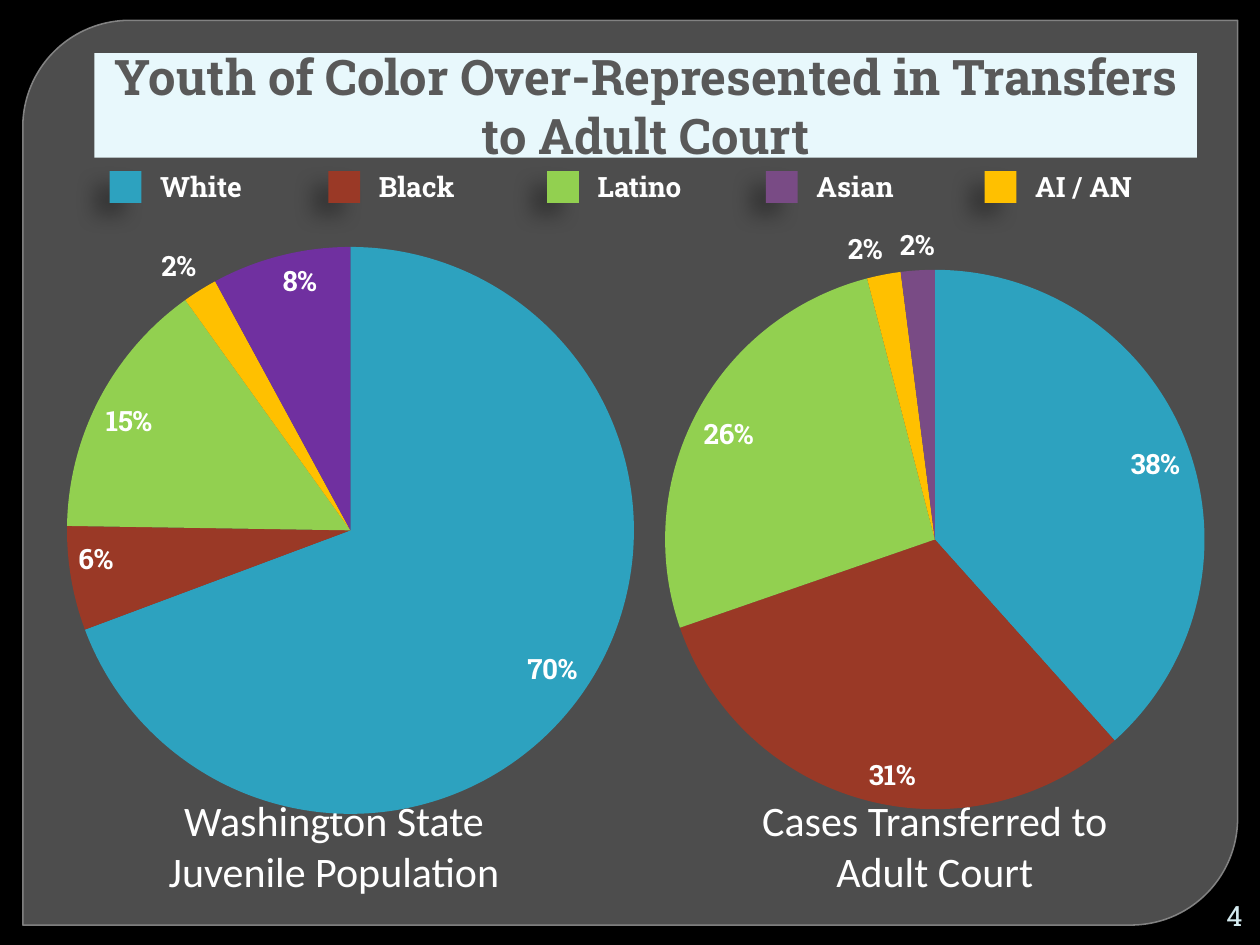
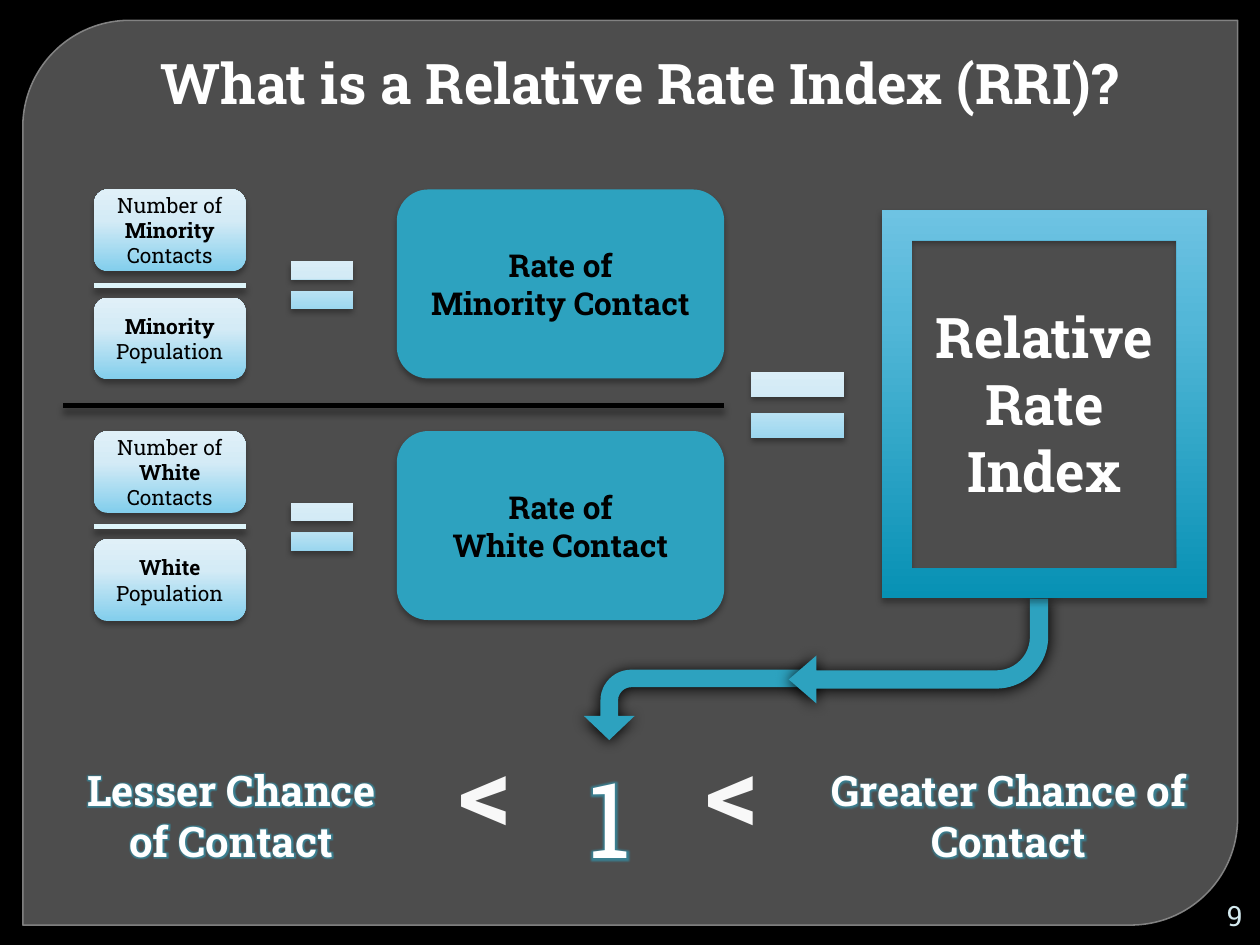
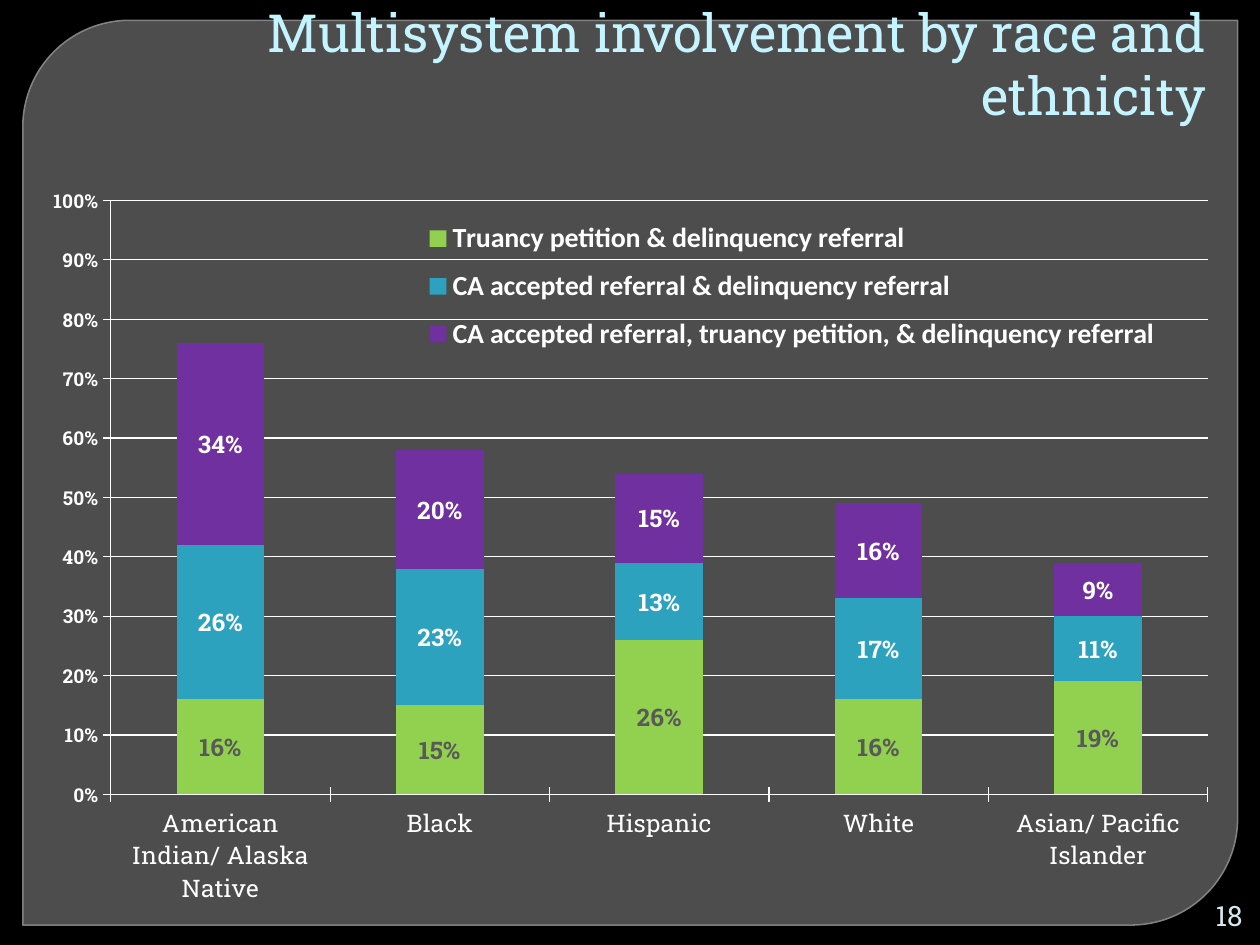
from lxml.etree import SubElement
from pptx import Presentation
from pptx.chart.data import CategoryChartData
from pptx.dml.color import RGBColor
from pptx.enum.chart import XL_CHART_TYPE as ChartType
from pptx.enum.chart import XL_LABEL_POSITION as LabelPosition
from pptx.enum.chart import XL_LEGEND_POSITION as LegendPosition
from pptx.enum.chart import XL_TICK_MARK as TickMark
from pptx.enum.shapes import MSO_CONNECTOR as Connector
from pptx.enum.shapes import MSO_SHAPE as Shape
from pptx.enum.text import MSO_ANCHOR as Anchor
from pptx.enum.text import MSO_AUTO_SIZE as AutoSize
from pptx.enum.text import PP_ALIGN as Align
from pptx.oxml import parse_xml
from pptx.oxml.ns import nsdecls, qn
from pptx.util import Cm, Pt

# Shared style
SLAB, SANS = "Roboto Slab", "Calibri"
WHITE, BLACK, GRAY = "FFFFFF", "000000", "595959"
TEAL, RUST, GREEN = "2DA2BF", "9A3926", "92D050"
PLUM, PURPLE, AMBER = "794B85", "7030A0", "FFC000"
PALE_STOPS = [(0, "82CEEC"), (62, "D4EBF6"), (100, "E0F0F8")]
FRAME_STOPS = [(0, "0791B4"), (72, "53B7D8"), (100, "6EC3E3")]

# Shadows: opacity in percent, blur and distance in points, direction in degrees
SOFT = (32, 3.5, 2.2, 90)
LINE_SHADOW = (43, 4, 3, 90)
ARROW_SHADOW = (100, 8.5, 1, 90)
KEY_SHADOW = (28, 11, 12, 141)


def rgb(value):
    return RGBColor.from_string(value)


def set_alpha(parent, percent):
    color = next(parent.iter(qn("a:srgbClr")))
    SubElement(color, qn("a:alpha"), val=str(percent * 1000))


def shadow_xml(opacity, blur, distance, direction):
    return (f'<a:outerShdw {nsdecls("a")} blurRad="{Pt(blur)}" dist="{Pt(distance)}" '
            f'dir="{direction * 60000}" rotWithShape="0"><a:srgbClr val="{BLACK}">'
            f'<a:alpha val="{opacity * 1000}"/></a:srgbClr></a:outerShdw>')


def glow_xml(color, radius):
    return (f'<a:glow {nsdecls("a")} rad="{Pt(radius)}"><a:srgbClr val="{color}">'
            f'<a:alpha val="60000"/></a:srgbClr></a:glow>')


def format_font(font, size, color=WHITE, bold=False, name=SLAB):
    font.size, font.bold, font.name = Pt(size), bold, name
    font.color.rgb = rgb(color)


def write(frame, text, size=16, color=WHITE, bold=False, font=SLAB, align=Align.CENTER,
          anchor=Anchor.MIDDLE, margin=0.13, effect=None):
    """Fill a text frame; each line is a string or a list of (text, bold) parts."""
    frame.word_wrap, frame.auto_size = True, AutoSize.NONE
    frame.vertical_anchor = anchor
    frame.margin_left = frame.margin_right = Cm(0.25)
    frame.margin_top = frame.margin_bottom = Cm(margin)
    for index, line in enumerate([text] if isinstance(text, str) else text):
        paragraph = frame.add_paragraph() if index else frame.paragraphs[0]
        paragraph.alignment = align
        for part, part_bold in [(line, bold)] if isinstance(line, str) else line:
            run = paragraph.add_run()
            run.text = part
            format_font(run.font, size, color, part_bold, font)
            if effect:
                holder = parse_xml(f'<a:effectLst {nsdecls("a")}>{effect}</a:effectLst>')
                run._r.rPr.find(qn("a:solidFill")).addnext(holder)


def set_layout(parent, index, left, top, width, height, inner=False):
    """Place a chart part by fractions of the chart frame."""
    for old in parent.findall(qn("c:layout")):
        parent.remove(old)
    target = '<c:layoutTarget val="inner"/>' if inner else ""
    parent.insert(index, parse_xml(
        f'<c:layout {nsdecls("c")}><c:manualLayout>{target}'
        f'<c:xMode val="edge"/><c:yMode val="edge"/><c:x val="{left}"/><c:y val="{top}"/>'
        f'<c:w val="{width}"/><c:h val="{height}"/></c:manualLayout></c:layout>'))


class Deck:
    def __init__(self):
        self.presentation = Presentation()
        self.presentation.slide_width, self.presentation.slide_height = Cm(25.4), Cm(19.05)
        self.layout = self.presentation.slide_layouts[5]
        self.slide = None
        background = self.presentation.slide_master.background.fill
        background.solid()
        background.fore_color.rgb = rgb(BLACK)

    def new_slide(self, number, title, box, fill=None, **text_format):
        first = self.slide is None
        self.slide = self.presentation.slides.add_slide(self.layout)
        if first:
            self.add_panel_to_layout()
        placeholder = self.slide.shapes.title
        placeholder.left, placeholder.top, placeholder.width, placeholder.height = map(Cm, box)
        if fill:
            placeholder.fill.solid()
            placeholder.fill.fore_color.rgb = rgb(fill)
        write(placeholder.text_frame, title, **text_format)
        self.text(24, 18.08, 1.3, 0.76, str(number), color="D4EAEF", align=Align.RIGHT)

    def add_panel_to_layout(self):
        panel = self.shape(Shape.ROUND_2_DIAG_RECTANGLE, 0.46, 0.41, 24.49, 18.24,
                           "777777", adjust=(0.118, 0))
        panel.line.color.rgb = rgb("8E8E8E")
        panel.line.width = Pt(0.87)
        properties = panel.element.spPr
        set_alpha(properties.find(qn("a:solidFill")), 65)
        set_alpha(properties.find(qn("a:ln")), 88)
        self.layout.shapes.element.insert(2, panel.element)

    def shape(self, kind, left, top, width, height, fill, adjust=(), shadow=None,
              rotation=0, flip=False):
        """Fill is a colour or a list of gradient stops from bottom to top."""
        shape = self.slide.shapes.add_shape(kind, Cm(left), Cm(top), Cm(width), Cm(height))
        for index, value in enumerate(adjust):
            shape.adjustments[index] = value
        shape.rotation = rotation
        shape.line.fill.background()
        shape.shadow.inherit = False
        shape.fill.solid()
        properties = shape.element.spPr
        if isinstance(fill, str):
            shape.fill.fore_color.rgb = rgb(fill)
        else:
            stops = "".join(f'<a:gs pos="{position * 1000}"><a:srgbClr val="{color}"/></a:gs>'
                            for position, color in fill)
            properties.replace(properties.find(qn("a:solidFill")), parse_xml(
                f'<a:gradFill {nsdecls("a")}><a:gsLst>{stops}</a:gsLst>'
                f'<a:lin ang="16200000" scaled="0"/></a:gradFill>'))
        if shadow:
            properties.find(qn("a:effectLst")).append(parse_xml(shadow_xml(*shadow)))
        if flip:
            properties.find(qn("a:xfrm")).set("flipH", "1")
        return shape

    def text(self, left, top, width, height, text, rotation=0, **text_format):
        box = self.slide.shapes.add_textbox(Cm(left), Cm(top), Cm(width), Cm(height))
        box.rotation = rotation
        write(box.text_frame, text, **text_format)

    def line(self, left, right, y, color):
        line = self.slide.shapes.add_connector(Connector.STRAIGHT, Cm(left), Cm(y),
                                               Cm(right), Cm(y))
        line.line.color.rgb = rgb(color)
        line.line.width = Pt(3)
        effects = SubElement(line.element.spPr, qn("a:effectLst"))
        effects.append(parse_xml(shadow_xml(*LINE_SHADOW)))

    def chart(self, kind, box, categories, series, number_format, plot):
        data = CategoryChartData(number_format=number_format)
        data.categories = categories
        for name, values in series:
            data.add_series(name, values)
        chart = self.slide.shapes.add_chart(kind, *map(Cm, box), data).chart
        chart.has_title = chart.has_legend = False
        format_font(chart.font, 10)
        set_layout(chart.element.find(".//" + qn("c:plotArea")), 0, *plot, inner=True)
        return chart

    def labels(self, series, number_format, position, size, color=WHITE):
        labels = series.data_labels
        labels.show_value = True
        labels.number_format, labels.number_format_is_linked = number_format, False
        labels.position = position
        format_font(labels.font, size, color, bold=True)

    def pie(self, box, values, colors, outside, number_format, plot):
        chart = self.chart(ChartType.PIE, box, ["1", "2", "3", "4", "5"],
                           [("Series 1", values)], number_format, plot)
        chart.plots[0].vary_by_categories = True
        series = chart.plots[0].series[0]
        self.labels(series, number_format, LabelPosition.INSIDE_END, 16)
        for index, color in enumerate(colors):
            point = series.points[index]
            point.format.fill.solid()
            point.format.fill.fore_color.rgb = rgb(color)
            if index in outside:
                format_font(point.data_label.font, 16, bold=True)
                point.data_label.position = LabelPosition.OUTSIDE_END

    def stacked_columns(self, box, categories, series, plot, legend_area):
        """Series are (name, values, fill colour, label colour)."""
        chart = self.chart(ChartType.COLUMN_STACKED, box, categories,
                           [item[:2] for item in series], "0%", plot)
        columns = chart.plots[0]
        columns.gap_width, columns.overlap = 150, 100
        columns.vary_by_categories = False
        for column, (_, _, fill, label_color) in zip(columns.series, series):
            column.format.fill.solid()
            column.format.fill.fore_color.rgb = rgb(fill)
            self.labels(column, "0%", LabelPosition.CENTER, 14, label_color)

        value_axis, category_axis = chart.value_axis, chart.category_axis
        value_axis.minimum_scale, value_axis.maximum_scale = 0, 1
        value_axis.major_unit = 0.1
        value_axis.tick_labels.number_format = "0%"
        value_axis.tick_labels.number_format_is_linked = False
        format_font(value_axis.tick_labels.font, 11, bold=True)
        format_font(category_axis.tick_labels.font, 14)
        for axis in (value_axis, category_axis):
            axis.major_tick_mark = TickMark.CROSS
        for part in (value_axis, category_axis, value_axis.major_gridlines):
            part.format.line.color.rgb = rgb(WHITE)
            part.format.line.width = Pt(0.75)

        chart.has_legend = True
        legend = chart.legend
        legend.position, legend.include_in_layout = LegendPosition.BOTTOM, False
        format_font(legend.font, 16, bold=True, name=SANS)
        set_layout(chart.element.find(".//" + qn("c:legend")), 1, *legend_area)


def transfers_slide(deck):
    deck.new_slide(4, "Youth of Color Over-Represented in Transfers to Adult Court",
                   (1.9, 1.07, 22.23, 2.11), fill="E8F8FC", size=28, color=GRAY, bold=True)

    # Colour key
    groups = [("White", TEAL), ("Black", RUST), ("Latino", GREEN),
              ("Asian", PLUM), ("AI / AN", AMBER)]
    for index, (group, color) in enumerate(groups):
        left = 2.21 + index * 4.41
        deck.shape(Shape.RECTANGLE, left, 3.45, 0.64, 0.64, color, shadow=KEY_SHADOW)
        deck.text(left + 0.77, 3.28, 2.97, 0.94, group, bold=True, align=Align.LEFT)

    # Captions and pies
    captions = [(2.29, "Washington State Juvenile Population"),
                (14.4, "Cases Transferred to Adult Court")]
    for left, caption in captions:
        deck.text(left, 15.88, 8.89, 2.31, caption, size=24, font=SANS)
    deck.pie((0, 4.09, 13.46, 12.7), (70, 6, 15, 2, 8), (TEAL, RUST, GREEN, AMBER, PURPLE),
             {3}, '0"%"', (0.1, 0.07, 0.85, 0.9))
    deck.pie((11.86, 4.19, 13.97, 12.5), (0.38, 0.31, 0.26, 0.02, 0.02),
             (TEAL, RUST, GREEN, AMBER, PLUM), {3, 4}, "0%", (0.11, 0.1, 0.78, 0.87))


def equals_sign(deck, left, top, width, height):
    deck.shape(Shape.MATH_EQUAL, left, top, width, height, PALE_STOPS,
               adjust=(0.235, 0.159), shadow=SOFT)


def rate_row(deck, top, group):
    """Contacts over population equals the rate for one group."""
    rate = deck.shape(Shape.FLOWCHART_ALTERNATE_PROCESS, 8, top, 6.6, 3.81, TEAL, shadow=SOFT)
    write(rate.text_frame, ["Rate of", f"{group} Contact"], size=18, color=BLACK, bold=True)
    deck.line(1.9, 4.95, top + 1.93, "DEF5FA")
    fraction = [(0, [("Number of ", False), (group, True), (" Contacts", False)]),
                (2.18, [(group, True), (" Population", False)])]
    for offset, parts in fraction:
        box = deck.shape(Shape.ROUNDED_RECTANGLE, 1.9, top + offset, 3.05, 1.65,
                         PALE_STOPS, shadow=SOFT)
        write(box.text_frame, [parts], size=12, color=BLACK, margin=0)
    equals_sign(deck, 5.64, top + 1.17, 1.7, 1.52)


def index_slide(deck):
    deck.new_slide(9, "What is a Relative Rate Index (RRI)?", (0.84, 0.84, 24.13, 1.63),
                   size=32, bold=True, anchor=Anchor.TOP)

    # Minority rate over white rate
    for row, group in enumerate(["Minority", "White"]):
        rate_row(deck, 3.82 + row * 4.87, group)
    deck.line(1.27, 14.6, 8.18, BLACK)
    equals_sign(deck, 14.81, 7.11, 2.54, 2.11)

    # Bent arrows from the index to its reading
    deck.shape(Shape.BENT_ARROW, 13.36, 11.91, 1.42, 4.6, TEAL, rotation=270, flip=True,
               adjust=(0.25, 0.361, 0.343, 0.438), shadow=ARROW_SHADOW)
    deck.shape(Shape.BENT_ARROW, 15.9, 12.07, 5.23, 2.11, TEAL, rotation=180,
               adjust=(0.175, 0.229, 0.264, 0.495), shadow=ARROW_SHADOW)

    # Framed index
    deck.shape(Shape.FRAME, 17.78, 4.24, 6.55, 7.82, FRAME_STOPS, adjust=(0.092,), shadow=SOFT)
    deck.text(18.42, 5.97, 5.28, 4.37, "Relative Rate Index", size=32, bold=True,
              anchor=Anchor.TOP, effect=shadow_xml(50, 3, 3, 45))

    # Reading the index
    glow = glow_xml(TEAL, 4)
    for left, width, chance in [(1.07, 7.19, "Lesser Chance of Contact"),
                                (16.31, 8.05, "Greater Chance of Contact")]:
        deck.text(left, 15.29, width, 2.31, chance, size=24, bold=True,
                  anchor=Anchor.TOP, effect=glow)
    deck.text(11.33, 15.29, 1.91, 2.34, "1", size=60, effect=glow)
    for left in (8.51, 13.49):
        deck.text(left, 15.39, 2.54, 2.11, ">", rotation=180, size=60, color="F8F8F8",
                  bold=True, margin=0)


def involvement_slide(deck):
    deck.new_slide(18, "Multisystem involvement by race and ethnicity",
                   (0.43, 0.84, 24.13, 1.83), size=30, color="C4F4FF",
                   align=Align.RIGHT, anchor=Anchor.BOTTOM)
    series = [
        ("Truancy petition & delinquency referral",
         (0.16, 0.15, 0.26, 0.16, 0.19), GREEN, GRAY),
        ("CA accepted referral & delinquency referral",
         (0.26, 0.23, 0.13, 0.17, 0.11), TEAL, WHITE),
        ("CA accepted referral, truancy petition, & delinquency referral",
         (0.34, 0.2, 0.15, 0.16, 0.09), PURPLE, WHITE),
    ]
    categories = ["American Indian/ Alaska Native", "Black", "Hispanic", "White",
                  "Asian/ Pacific Islander"]
    deck.stacked_columns((1.07, 3.61, 23.29, 14.61), categories, series,
                         plot=(0.05, 0.03, 0.95, 0.83), legend_area=(0.31, 0.04, 0.66, 0.22))


def main():
    deck = Deck()
    transfers_slide(deck)
    index_slide(deck)
    involvement_slide(deck)
    deck.presentation.save("out.pptx")


if __name__ == "__main__":
    main()
